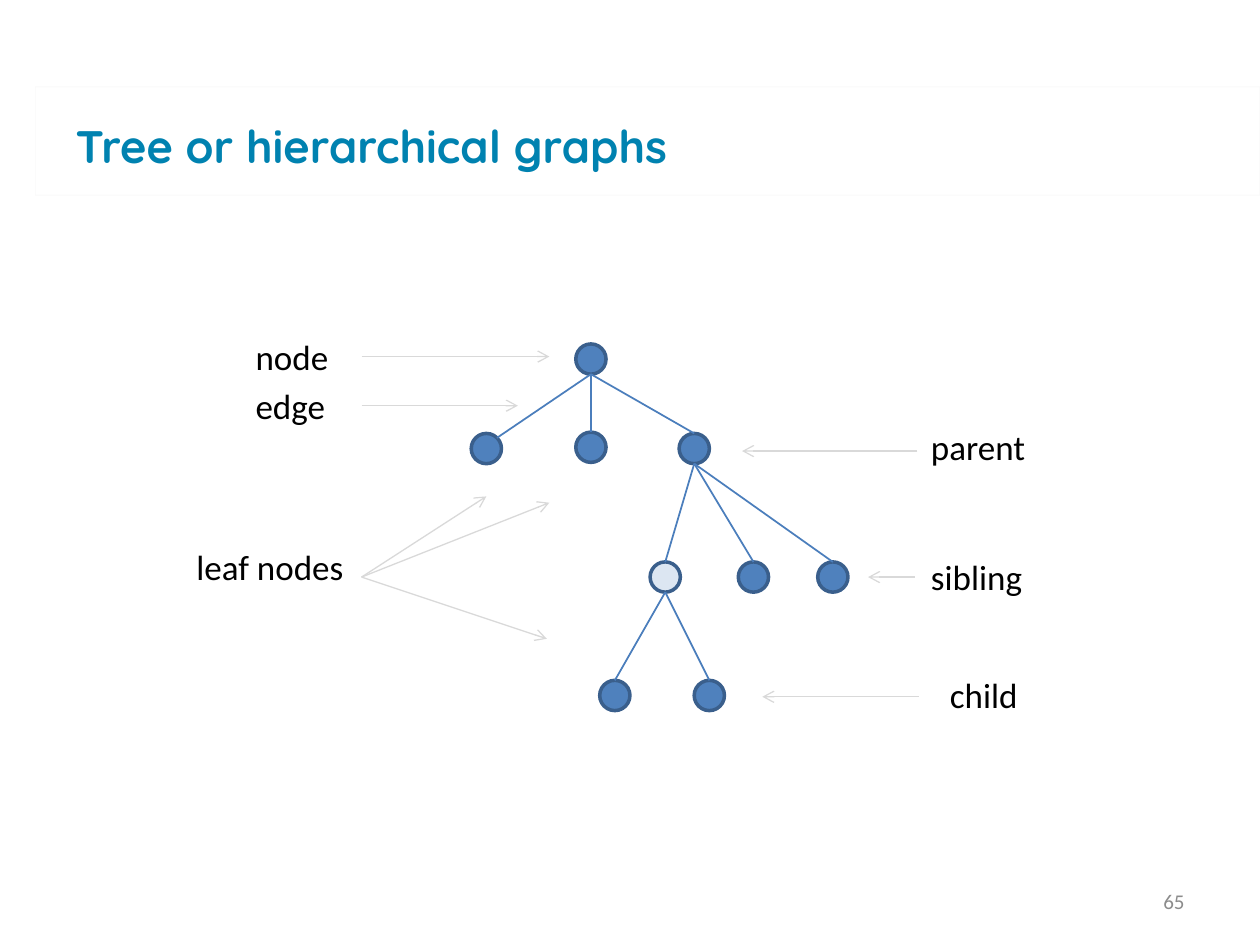
from math import sqrt

from pptx import Presentation
from pptx.dml.color import RGBColor
from pptx.enum.shapes import MSO_CONNECTOR, MSO_SHAPE
from pptx.enum.text import MSO_ANCHOR, MSO_AUTO_SIZE, PP_ALIGN
from pptx.oxml.ns import qn
from pptx.util import Inches, Pt
from lxml.etree import SubElement

NODE_SIZE = 0.24
RADIUS = NODE_SIZE / 2

# name: (centre x, centre y)
NODES = {
    "root": (4.69, 2.85),
    "left leaf": (3.86, 3.56),
    "middle leaf": (4.69, 3.55),
    "parent": (5.51, 3.56),
    "highlighted": (5.28, 4.58),
    "first sibling": (5.98, 4.58),
    "second sibling": (6.61, 4.58),
    "left child": (4.88, 5.52),
    "right child": (5.63, 5.52),
}
CHILDREN = {
    "root": ["left leaf", "middle leaf", "parent"],
    "parent": ["highlighted", "first sibling", "second sibling"],
    "highlighted": ["left child", "right child"],
}
# text, left, top, width
LABELS = [
    ("edge", 1.93, 3.0, 0.94),
    ("node", 1.93, 2.61, 0.94),
    ("parent", 7.29, 3.33, 1.25),
    ("sibling", 7.29, 4.36, 1.25),
    ("child", 7.44, 5.3, 1.09),
    ("leaf nodes", 1.46, 4.28, 1.57),
]
LEAF_ORIGIN = (2.87, 4.58)
POINTERS = [
    ((2.87, 2.83), (4.36, 2.83)),
    ((2.87, 3.22), (4.11, 3.22)),
    ((7.28, 3.58), (5.89, 3.58)),
    ((7.29, 5.53), (6.05, 5.53)),
    ((7.26, 4.58), (6.89, 4.58)),
    (LEAF_ORIGIN, (3.86, 3.94)),
    (LEAF_ORIGIN, (4.36, 3.99)),
    (LEAF_ORIGIN, (4.34, 5.07)),
]


def rgb(value):
    return RGBColor.from_string(value)


class TreeSlide:
    text_font, title_font = "Calibri", "Quicksand"
    node_fill, highlight_fill, node_line = "4F81BD", "DCE6F2", "3A5F8C"
    edge_color, pointer_color = "4B7EBC", "D9D9D9"

    def __init__(self, slide):
        self.slide = slide
        self.shapes = slide.shapes

    def style(self, paragraph, name, size, color, bold=False):
        font = paragraph.font
        font.name, font.size, font.bold = name, Pt(size), bold
        font.color.rgb = rgb(color)

    def shape(self, kind, left, top, width, height, fill, line, weight):
        shape = self.shapes.add_shape(
            kind, Inches(left), Inches(top), Inches(width), Inches(height))
        shape.shadow.inherit = False
        shape.fill.solid()
        shape.fill.fore_color.rgb = rgb(fill)
        shape.line.color.rgb = rgb(line)
        shape.line.width = Pt(weight)
        return shape

    def title_band(self):
        """Faintly outlined strip, sent behind the title."""
        band = self.shape(MSO_SHAPE.RECTANGLE, 0.28, 0.69, 9.72, 0.86,
                          "FFFFFF", "F2F2F2", 0.25).element
        outline = band.spPr.find(qn("a:ln"))
        color = next(outline.iter(qn("a:srgbClr")))
        SubElement(color, qn("a:alpha")).set("val", "66000")
        band.getparent().insert(2, band)

    def title(self, text):
        title = self.shapes.title
        title.left, title.top = Inches(0.5), Inches(0.53)
        title.width, title.height = Inches(9), Inches(1.25)
        frame = title.text_frame
        frame.text = text
        frame.vertical_anchor = MSO_ANCHOR.MIDDLE
        frame.paragraphs[0].alignment = PP_ALIGN.LEFT
        self.style(frame.paragraphs[0], self.title_font, 26, "0082B0", True)

    def text(self, text, left, top, width, height=0.44, size=20, color="000000"):
        box = self.shapes.add_textbox(
            Inches(left), Inches(top), Inches(width), Inches(height))
        frame = box.text_frame
        frame.word_wrap = True
        frame.text = text
        self.style(frame.paragraphs[0], self.text_font, size, color)
        return frame

    def label(self, text, left, top, width):
        self.text(text, left, top, width).auto_size = MSO_AUTO_SIZE.SHAPE_TO_FIT_TEXT

    def page_number(self, number):
        frame = self.text(number, 7.17, 6.95, 2.33, 0.4, 12, "8C8C8C")
        frame.vertical_anchor = MSO_ANCHOR.MIDDLE
        frame.paragraphs[0].alignment = PP_ALIGN.RIGHT

    def node(self, x, y, fill):
        self.shape(MSO_SHAPE.OVAL, x - RADIUS, y - RADIUS,
                   NODE_SIZE, NODE_SIZE, fill, self.node_line, 2)

    def line(self, start, end, color, weight):
        line = self.shapes.add_connector(
            MSO_CONNECTOR.STRAIGHT, *(Inches(v) for v in (*start, *end)))
        line.line.color.rgb = rgb(color)
        line.line.width = Pt(weight)
        SubElement(line.element.spPr, qn("a:effectLst"))
        return line

    def edge(self, parent, child):
        x, y = NODES[parent]
        child_x, child_y = NODES[child]
        end = (child_x, child_y - RADIUS)
        if child == "left leaf":  # meets the circle at its upper right
            offset = RADIUS / sqrt(2)
            end = (child_x + offset, child_y - offset)
        self.line((x, y + RADIUS), end, self.edge_color, 1)

    def pointer(self, start, end):
        arrow = self.line(start, end, self.pointer_color, 0.75)
        outline = arrow.element.spPr.find(qn("a:ln"))
        SubElement(outline, qn("a:tailEnd")).set("type", "arrow")


def main():
    deck = Presentation()
    deck.slide_width, deck.slide_height = Inches(10), Inches(7.5)
    tree = TreeSlide(deck.slides.add_slide(deck.slide_layouts[5]))

    tree.title_band()
    tree.page_number("65")
    tree.title("Tree or hierarchical graphs")
    for name, (x, y) in NODES.items():
        tree.node(x, y, tree.highlight_fill if name == "highlighted" else tree.node_fill)
    for parent, children in CHILDREN.items():
        for child in children:
            tree.edge(parent, child)
    for label in LABELS:
        tree.label(*label)
    for start, end in POINTERS:
        tree.pointer(start, end)

    deck.save("out.pptx")


if __name__ == "__main__":
    main()
